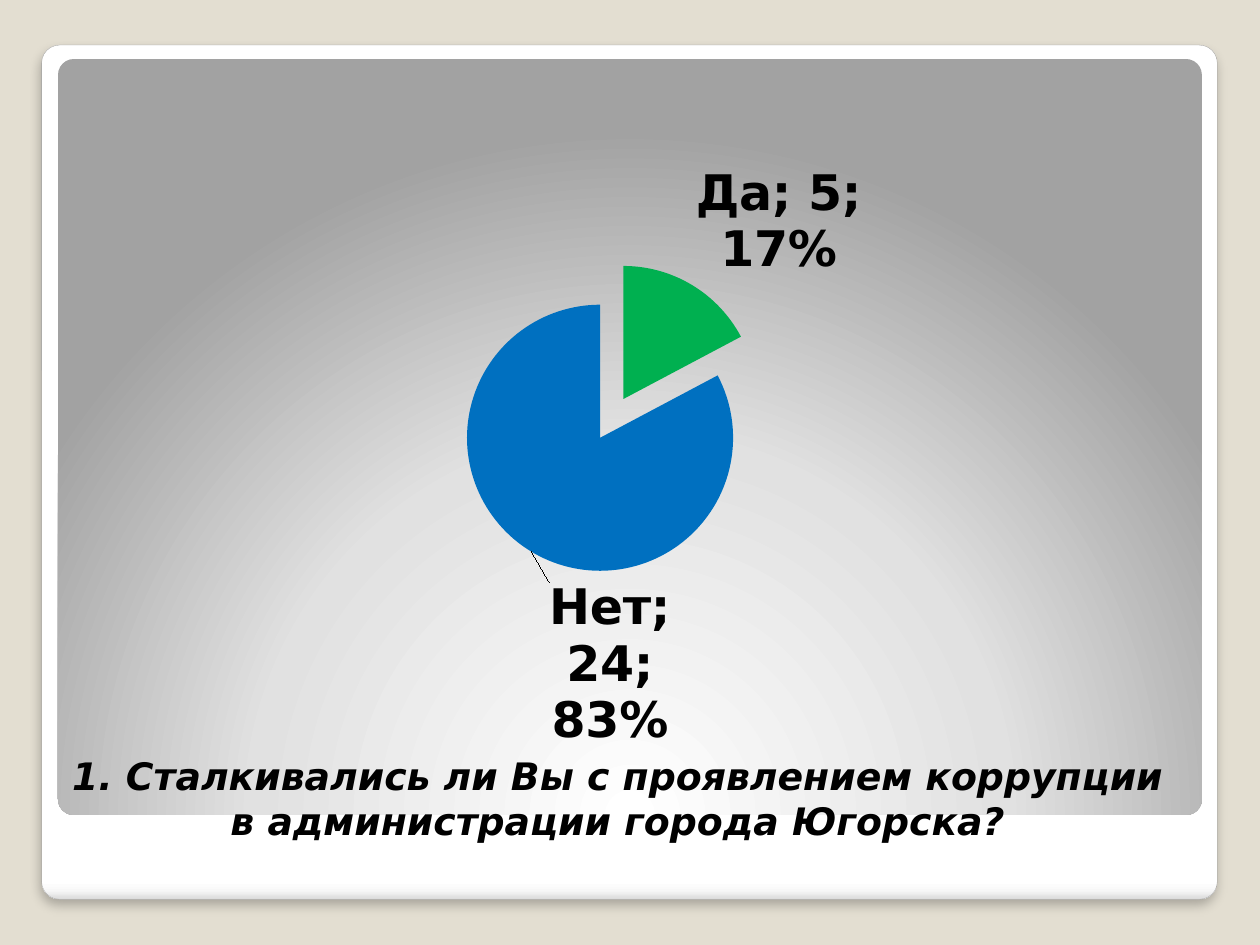
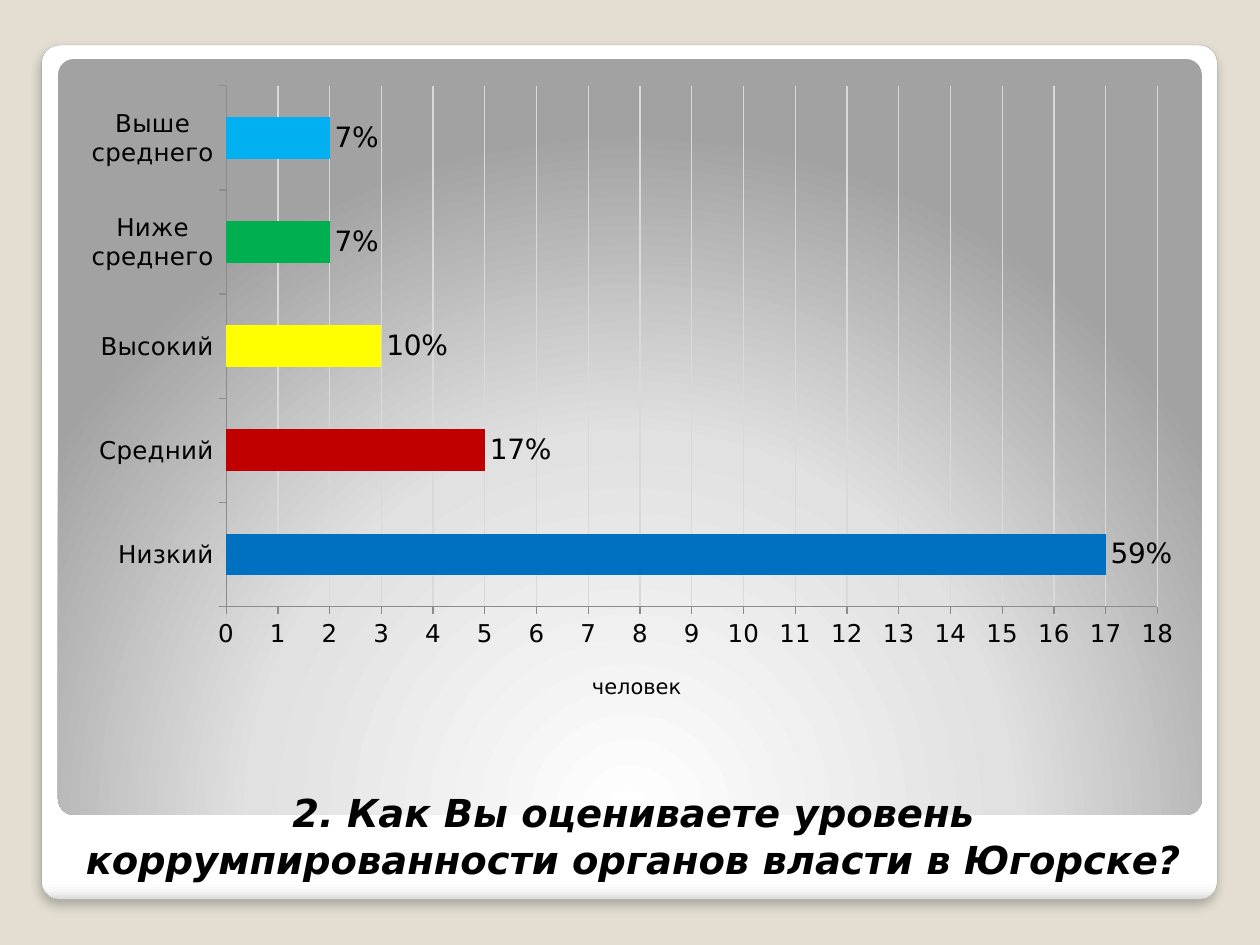
from dataclasses import dataclass

from pptx import Presentation
from pptx.chart.data import CategoryChartData
from pptx.dml.color import RGBColor
from pptx.enum.chart import XL_CHART_TYPE, XL_LABEL_POSITION, XL_TICK_MARK
from pptx.enum.shapes import MSO_SHAPE
from pptx.enum.text import MSO_ANCHOR, PP_ALIGN
from pptx.oxml import parse_xml
from pptx.oxml.ns import nsdecls, qn
from pptx.util import Cm, Pt

PIE = XL_CHART_TYPE.PIE
BAR = XL_CHART_TYPE.BAR_CLUSTERED
OUTSIDE_END = XL_LABEL_POSITION.OUTSIDE_END
TICK_OUT = XL_TICK_MARK.OUTSIDE
ROUNDED = MSO_SHAPE.ROUNDED_RECTANGLE
BOTTOM = MSO_ANCHOR.BOTTOM
CENTER = PP_ALIGN.CENTER


@dataclass(frozen=True)
class Theme:
    font: str = "DejaVu Sans"
    background: str = "E3DED1"
    text: str = "000000"
    card_edge: str = "A4A4A4"
    grid: str = "D9D9D9"
    axis: str = "8B8B8B"
    blue: str = "0070C0"
    green: str = "00B050"
    red: str = "C00000"
    yellow: str = "FFFF00"
    sky: str = "00B0F0"
    card_stops: tuple = ((0, "FFFFFF"), (98, "FFFFFF"), (99, "F7F7F7"), (100, "DADADA"))
    panel_stops: tuple = ((0, "FFFFFF"), (55, "E1E1E1"), (100, "A2A2A2"))
    chart_size: float = 18
    pie_label_size: float = 28
    bar_label_size: float = 16
    tick_size: float = 14
    axis_title_size: float = 12


def rgb(color):
    return RGBColor.from_string(color)


def format_font(font, theme, size, bold=False, italic=False):
    font.name = theme.font
    font.size = Pt(size)
    font.bold = bold
    font.italic = italic
    font.color.rgb = rgb(theme.text)


def set_text(frame, text, theme, size, bold=False, italic=False, align=CENTER):
    paragraph = frame.paragraphs[0]
    paragraph.alignment = align
    run = paragraph.add_run()
    run.text = text
    format_font(run.font, theme, size, bold, italic)


def fill_gradient(shape, stops, direction):
    shape.fill.background()
    stop_xml = "".join(
        f'<a:gs pos="{position * 1000}"><a:srgbClr val="{color}"/></a:gs>'
        for position, color in stops
    )
    gradient = parse_xml(
        f'<a:gradFill {nsdecls("a")} rotWithShape="1">'
        f"<a:gsLst>{stop_xml}</a:gsLst>{direction}</a:gradFill>"
    )
    properties = shape.element.spPr
    properties.replace(properties.find(qn("a:noFill")), gradient)


def manual_layout(x, y, width=None, height=None):
    target = modes = size = ""
    if width:
        target = '<c:layoutTarget val="inner"/>'
        size = f'<c:w val="{width}"/><c:h val="{height}"/>'
    if width or height == 0:
        modes = '<c:xMode val="edge"/><c:yMode val="edge"/>'
    return parse_xml(
        f'<c:layout {nsdecls("c")}><c:manualLayout>{target}{modes}'
        f'<c:x val="{x}"/><c:y val="{y}"/>{size}</c:manualLayout></c:layout>'
    )


def place_plot(chart, *box):
    plot_area = chart.element.find(".//" + qn("c:plotArea"))
    for layout in plot_area.findall(qn("c:layout")):
        plot_area.remove(layout)
    plot_area.insert(0, manual_layout(*box))


class SurveyDeck:
    def __init__(self, theme):
        self.theme = theme
        self.presentation = Presentation()
        self.presentation.slide_width = Cm(25.4)
        self.presentation.slide_height = Cm(19.05)
        self.slide = None

    def add_slide(self):
        self.slide = self.presentation.slides.add_slide(self.presentation.slide_layouts[6])
        background = self.slide.background.fill
        background.solid()
        background.fore_color.rgb = rgb(self.theme.background)
        card = self.rounded_box(0.84, 0.91, 23.7, 17.22)
        fill_gradient(card, self.theme.card_stops, '<a:lin ang="5400000" scaled="0"/>')
        card.line.color.rgb = rgb(self.theme.card_edge)
        card.line.width = Pt(0.16)
        card.element.spPr.find(qn("a:effectLst")).append(parse_xml(
            f'<a:outerShdw {nsdecls("a")} blurRad="{Pt(6)}" dist="{Pt(4)}" dir="5400000" '
            'algn="tl" rotWithShape="0"><a:srgbClr val="000000">'
            '<a:alpha val="25000"/></a:srgbClr></a:outerShdw>'
        ))
        panel = self.rounded_box(1.17, 1.19, 23.06, 15.24)
        fill_gradient(
            panel, self.theme.panel_stops,
            '<a:path path="circle">'
            '<a:fillToRect l="50000" t="175000" r="50000" b="-75000"/></a:path>',
        )
        panel.line.fill.background()

    def rounded_box(self, *box):
        shape = self.slide.shapes.add_shape(ROUNDED, *map(Cm, box))
        shape.adjustments[0] = 0.021
        shape.shadow.inherit = False
        return shape

    def question(self, text, box, size):
        frame = self.slide.shapes.add_textbox(*map(Cm, box)).text_frame
        frame.word_wrap = True
        frame.vertical_anchor = BOTTOM
        set_text(frame, text, self.theme, size, bold=True, italic=True)

    def chart(self, kind, answers, box):
        data = CategoryChartData()
        data.categories = [name for name, count, color in answers]
        data.add_series("Series 1", [count for name, count, color in answers])
        chart = self.slide.shapes.add_chart(kind, *map(Cm, box), data).chart
        chart.has_legend = False
        chart.has_title = False
        format_font(chart.font, self.theme, self.theme.chart_size)
        plot = chart.plots[0]
        plot.vary_by_categories = kind == PIE
        series = plot.series[0]
        for index, (name, count, color) in enumerate(answers):
            fill = series.points[index].format.fill
            fill.solid()
            fill.fore_color.rgb = rgb(color)
        return chart, series

    def answer_pie(self, answers, box):
        chart, series = self.chart(PIE, answers, box)
        place_plot(chart, 0.326, 0.195, 0.306, 0.515)
        series_xml = chart.plots[0].series[0]._element
        explosion = parse_xml(f'<c:explosion {nsdecls("c")} val="17"/>')
        series_xml.find(qn("c:dPt")).addprevious(explosion)
        labels = series.data_labels
        labels.show_value = labels.show_category_name = labels.show_percentage = True
        format_font(labels.font, self.theme, self.theme.pie_label_size, bold=True)
        no_label = series.points[1].data_label
        format_font(no_label.font, self.theme, self.theme.pie_label_size, bold=True)
        label_xml = series_xml.find(".//" + qn("c:dLbl"))
        label_xml.find(qn("c:idx")).addnext(manual_layout(0.14, 0.04))
        for tag in ("c:showVal", "c:showCatName", "c:showPercent"):
            label_xml.find(qn(tag)).set("val", "1")
        for bubble in series_xml.findall(".//" + qn("c:showBubbleSize")):
            bubble.addnext(parse_xml(f'<c:separator {nsdecls("c")}>; </c:separator>'))

    def style_axis(self, axis):
        axis.major_tick_mark = TICK_OUT
        axis.format.line.color.rgb = rgb(self.theme.axis)
        format_font(axis.tick_labels.font, self.theme, self.theme.tick_size)

    def rating_bars(self, answers, shares, unit, box):
        chart, series = self.chart(BAR, answers, box)
        place_plot(chart, 0.139, 0.02, 0.826, 0.804)
        chart.plots[0].gap_width = 150
        labels = series.data_labels
        labels.show_value = True
        labels.position = OUTSIDE_END
        format_font(labels.font, self.theme, self.theme.bar_label_size)
        for index, share in enumerate(shares):
            label = series.points[index].data_label
            set_text(label.text_frame, share, self.theme, self.theme.bar_label_size)
            label.position = OUTSIDE_END
        people = chart.value_axis
        for axis in (chart.category_axis, people):
            self.style_axis(axis)
        chart.category_axis.has_major_gridlines = False
        people.minimum_scale, people.maximum_scale, people.major_unit = 0, 18, 1
        people.has_major_gridlines = True
        grid = people.major_gridlines.format.line
        grid.color.rgb = rgb(self.theme.grid)
        grid.width = Pt(0.75)
        title = people.axis_title
        set_text(title.text_frame, unit, self.theme, self.theme.axis_title_size)
        title_xml = title._element
        for layout in title_xml.findall(qn("c:layout")):
            title_xml.remove(layout)
        title_xml.find(qn("c:tx")).addnext(manual_layout(0.46, 0.92, height=0))


def main():
    theme = Theme()
    deck = SurveyDeck(theme)

    deck.add_slide()
    deck.question(
        "1. Сталкивались ли Вы с проявлением коррупции в администрации города Югорска?",
        (1.09, 13.92, 22.73, 3.2), 21.6,
    )
    deck.answer_pie(
        [("Да", 5, theme.green), ("Нет", 24, theme.blue)],
        (2.49, 2.92, 20.55, 12.19),
    )

    deck.add_slide()
    deck.question(
        "2. Как Вы оцениваете уровень коррумпированности органов власти в Югорске?",
        (1.4, 13.51, 22.73, 4.39), 22,
    )
    deck.rating_bars(
        [
            ("Низкий", 17, theme.blue),
            ("Средний", 5, theme.red),
            ("Высокий", 3, theme.yellow),
            ("Ниже среднего", 2, theme.green),
            ("Выше среднего", 2, theme.sky),
        ],
        ["59%", "17%", "10%", "7%", "7%"],
        "человек",
        (1.4, 1.47, 22.73, 13.06),
    )

    deck.presentation.save("out.pptx")


if __name__ == "__main__":
    main()
